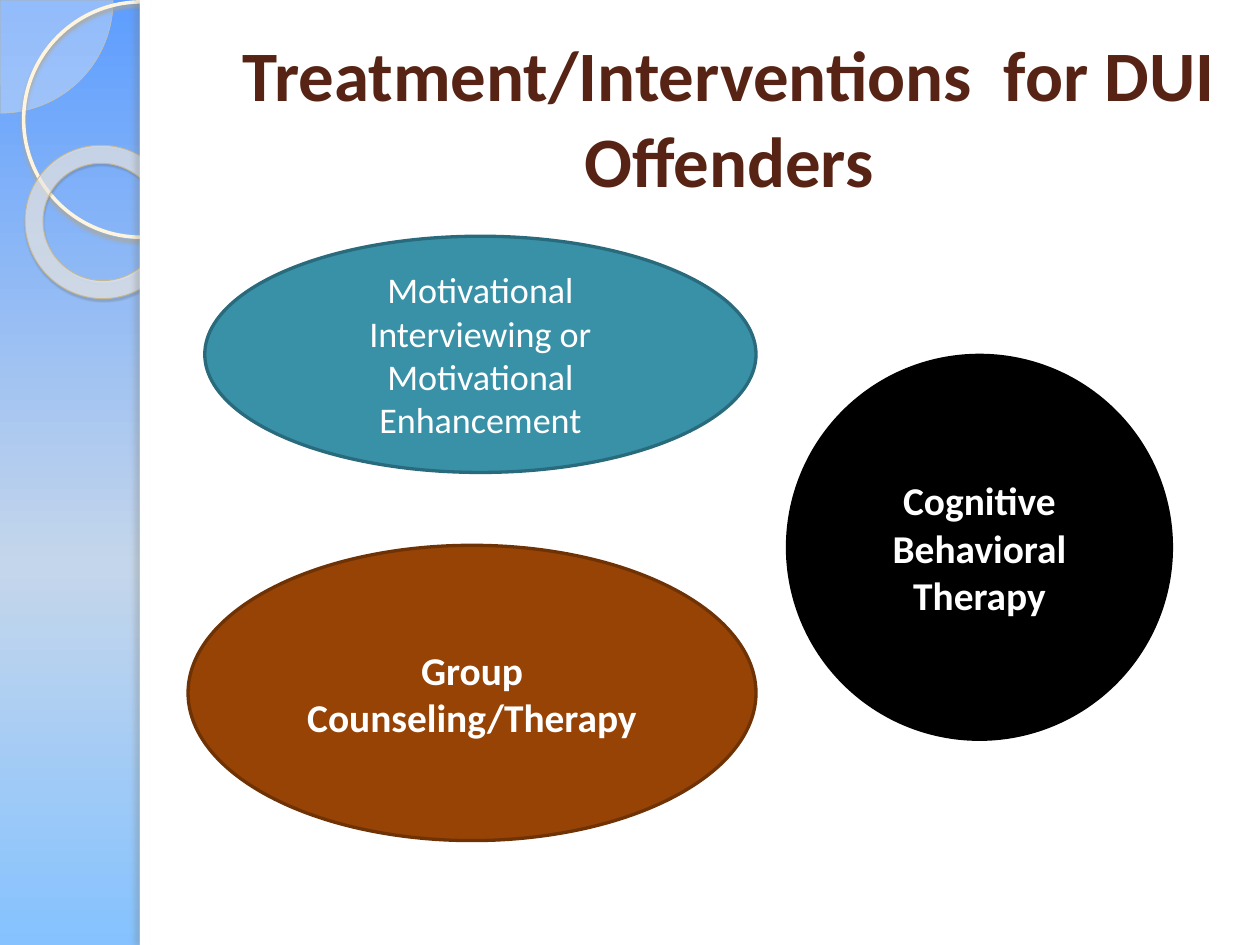
from dataclasses import dataclass
from typing import Optional

from lxml.etree import SubElement
from pptx import Presentation
from pptx.dml.color import RGBColor
from pptx.enum.shapes import MSO_SHAPE as Preset
from pptx.enum.text import MSO_ANCHOR as Anchor, MSO_AUTO_SIZE as AutoSize, PP_ALIGN as Align
from pptx.oxml.ns import qn
from pptx.util import Inches, Pt

COLUMNS, ROWS = 128, 96
CELL = Inches(1) / 12
FONT = "Calibri"

WHITE = RGBColor(0xFF, 0xFF, 0xFF)
BLACK = RGBColor(0x00, 0x00, 0x00)
BROWN = RGBColor(0x57, 0x23, 0x14)
TEAL = RGBColor(0x38, 0x91, 0xA7)
DARK_TEAL = RGBColor(0x29, 0x6B, 0x7C)
RUST = RGBColor(0x96, 0x43, 0x05)
DARK_RUST = RGBColor(0x6F, 0x32, 0x04)
CREAM = RGBColor(0xFE, 0xFA, 0xF4)
PALE_GOLD = RGBColor(0xFF, 0xF5, 0xDE)
SAND = RGBColor(0xD3, 0xC3, 0x9F)
KHAKI = RGBColor(0xC7, 0xB8, 0x93)
RING_SHADE = RGBColor(0xB0, 0xA6, 0x8F)
DONUT_SHADE = RGBColor(0x5A, 0x54, 0x44)
EDGE_SHADE = RGBColor(0x73, 0x6F, 0x63)
SKY = [(0, RGBColor(0x5E, 0x9E, 0xFF)), (60, RGBColor(0xC4, 0xD6, 0xEB)),
       (100, RGBColor(0x85, 0xC2, 0xFF))]


@dataclass(frozen=True)
class Box:
    """A place on the grid, in columns and rows."""
    column: float
    row: float
    columns: float
    rows: float

    def lengths(self) -> list[int]:
        return [round(n * CELL) for n in (self.column, self.row, self.columns, self.rows)]


@dataclass(frozen=True)
class Shadow:
    color: RGBColor
    opacity: float
    blur: float
    distance: float
    angle: float


@dataclass(frozen=True)
class Decoration:
    preset: Preset
    box: Box
    fill: Optional[RGBColor] = None
    opacity: float = 100
    line: Optional[RGBColor] = None
    line_width: float = 0
    shadow: Optional[Shadow] = None
    adjustments: tuple[float, ...] = ()
    rotation: float = 0


@dataclass(frozen=True)
class Treatment:
    label: str
    box: Box
    fill: RGBColor
    line: RGBColor
    size: float = 24
    bold: bool = True


DECORATIONS = [
    Decoration(Preset.PIE, Box(-11.4, -11.4, 22.9, 22.9), CREAM, 33, SAND, 0.25,
               adjustments=(0, 54)),
    Decoration(Preset.OVAL, Box(2.4, 0.2, 23.9, 23.9), line=PALE_GOLD, line_width=2.15,
               shadow=Shadow(RING_SHADE, 85, 2, 2, 90)),
    Decoration(Preset.DONUT, Box(2.5, 14.8, 15.7, 15.5), CREAM, 60, KHAKI, 0.58,
               Shadow(DONUT_SHADE, 35, 1, 1.2, 75), (0.118,), 38.6),
    Decoration(Preset.RECTANGLE, Box(14.2, 0, COLUMNS - 14.2, ROWS), WHITE),
    Decoration(Preset.RECTANGLE, Box(14.2, 0, 1.1, ROWS), WHITE,
               shadow=Shadow(EDGE_SHADE, 25, 3, 3, 180)),
]

TITLE_BOX = Box(23, 3.8, 102.1, 16)
TREATMENTS = [
    Treatment("Motivational Interviewing or Motivational Enhancement",
              Box(20.8, 24, 56, 24), TEAL, DARK_TEAL, 22, False),
    Treatment("Cognitive Behavioral Therapy", Box(80, 36.1, 39, 39), BLACK, BLACK),
    Treatment("Group Counseling/Therapy", Box(19.1, 55.4, 57.7, 30), RUST, DARK_RUST),
]


def add_color(parent, color: RGBColor, opacity: float = 100) -> None:
    node = SubElement(parent, qn("a:srgbClr"), val=str(color))
    if opacity < 100:
        SubElement(node, qn("a:alpha"), val=str(round(opacity * 1000)))


def paint_background(slide) -> None:
    fill = slide.background.fill
    fill.gradient()
    fill.gradient_angle = 270
    stops = slide.element.find(".//" + qn("a:gsLst"))
    stops.clear()
    for percent, color in SKY:
        add_color(SubElement(stops, qn("a:gs"), pos=str(percent * 1000)), color)


def add_shadow(shape, shadow: Shadow) -> None:
    effects = shape.element.spPr.find(qn("a:effectLst"))
    outer = SubElement(effects, qn("a:outerShdw"), blurRad=str(Pt(shadow.blur)),
                       dist=str(Pt(shadow.distance)), dir=str(round(shadow.angle * 60000)),
                       algn="tl", rotWithShape="0")
    add_color(outer, shadow.color, shadow.opacity)


def draw_decoration(slide, item: Decoration) -> None:
    shape = slide.shapes.add_shape(item.preset, *item.box.lengths())
    shape.rotation = item.rotation
    for index, value in enumerate(item.adjustments):
        shape.adjustments[index] = value
    if item.fill is None:
        shape.fill.background()
    else:
        shape.fill.solid()
        shape.fill.fore_color.rgb = item.fill
        if item.opacity < 100:
            color = shape.element.spPr.find(qn("a:solidFill")).find(qn("a:srgbClr"))
            SubElement(color, qn("a:alpha"), val=str(round(item.opacity * 1000)))
    if item.line is None:
        shape.line.fill.background()
    else:
        shape.line.color.rgb = item.line
        shape.line.width = Pt(item.line_width)
    shape.shadow.inherit = False
    if item.shadow:
        add_shadow(shape, item.shadow)


def write_centered(shape, text: str, size: float, color: RGBColor, bold: bool) -> None:
    frame = shape.text_frame
    frame.text = text
    frame.word_wrap = True
    frame.auto_size = AutoSize.NONE
    frame.vertical_anchor = Anchor.MIDDLE
    paragraph = frame.paragraphs[0]
    paragraph.alignment = Align.CENTER
    font = paragraph.runs[0].font
    font.name, font.size, font.bold = FONT, Pt(size), bold
    font.color.rgb = color


def place_title(slide) -> None:
    """Put the title in front of the white panel."""
    title = slide.shapes.title
    title.left, title.top, title.width, title.height = TITLE_BOX.lengths()
    write_centered(title, "Treatment/Interventions  for DUI Offenders", 43.2, BROWN, True)
    title.element.getparent().append(title.element)


def draw_treatment(slide, item: Treatment) -> None:
    oval = slide.shapes.add_shape(Preset.OVAL, *item.box.lengths())
    oval.fill.solid()
    oval.fill.fore_color.rgb = item.fill
    oval.line.color.rgb = item.line
    oval.line.width = Pt(2)
    oval.shadow.inherit = False
    write_centered(oval, item.label, item.size, WHITE, item.bold)


def main() -> None:
    deck = Presentation()
    deck.slide_width, deck.slide_height = round(COLUMNS * CELL), round(ROWS * CELL)
    slide = deck.slides.add_slide(deck.slide_layouts.get_by_name("Title Only"))
    paint_background(slide)
    for decoration in DECORATIONS:
        draw_decoration(slide, decoration)
    place_title(slide)
    for treatment in TREATMENTS:
        draw_treatment(slide, treatment)
    deck.save("out.pptx")


if __name__ == "__main__":
    main()
